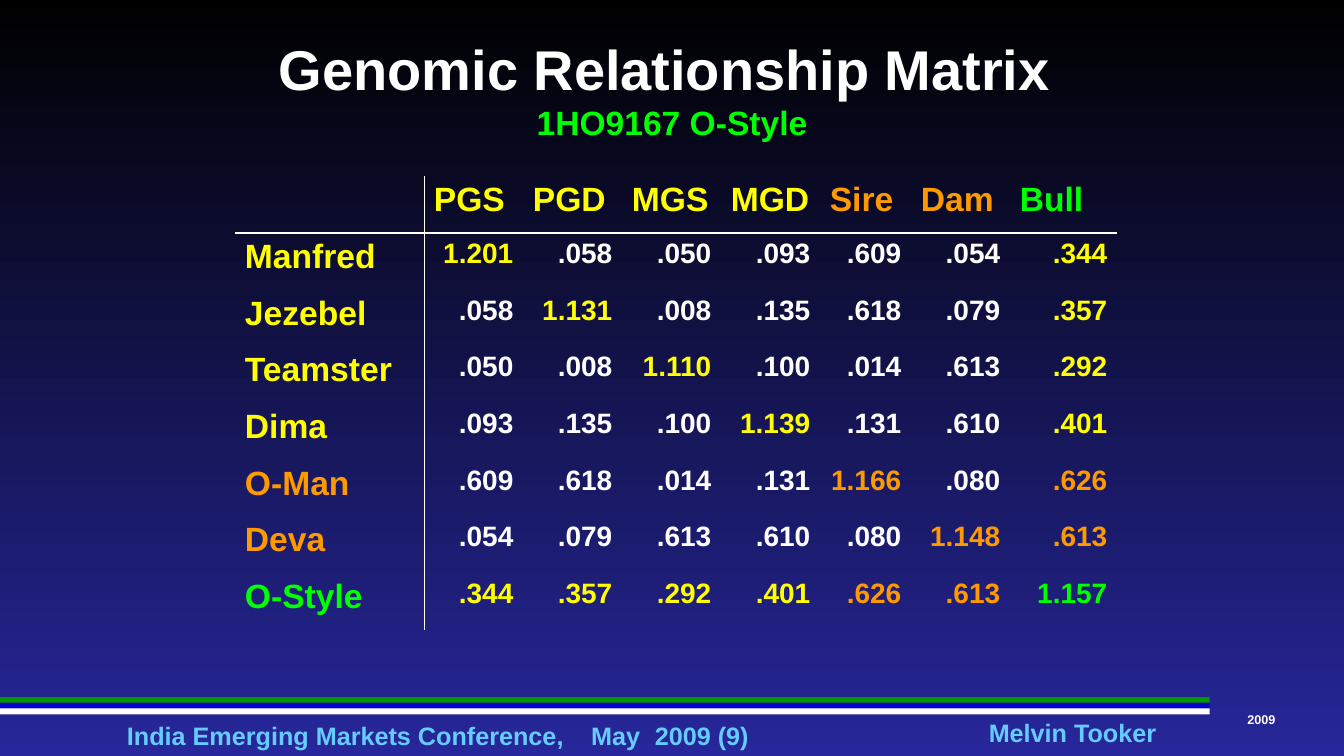
from lxml import etree
from pptx import Presentation
from pptx.dml.color import RGBColor
from pptx.enum.shapes import MSO_SHAPE
from pptx.enum.text import MSO_ANCHOR, PP_ALIGN
from pptx.oxml.ns import qn
from pptx.util import Pt

RECTANGLE = MSO_SHAPE.RECTANGLE
MIDDLE = MSO_ANCHOR.MIDDLE
LEFT, CENTER, RIGHT = PP_ALIGN.LEFT, PP_ALIGN.CENTER, PP_ALIGN.RIGHT

COLORS = {
    "black": "000000",
    "navy": "27279B",
    "white": "FFFFFF",
    "yellow": "FFFF00",
    "orange": "FF9900",
    "lime": "00FF00",
    "green": "009900",
    "blue": "0000CC",
    "sky": "66CCFF",
}
NO_STYLE = "{2D5ABB26-0587-4C30-8999-92F81FD0307C}"


def write(para, text, size, color, align=LEFT):
    para.alignment = align
    span = para.add_run()
    span.text = text
    span.font.name = "Arial"
    span.font.size = Pt(size)
    span.font.bold = True
    span.font.color.rgb = RGBColor.from_string(COLORS[color])


def add_border(cell, side, shown):
    line = etree.SubElement(cell._tc.get_or_add_tcPr(), qn(f"a:ln{side}"), w=str(Pt(1)))
    if shown:
        fill = etree.SubElement(line, qn("a:solidFill"))
        etree.SubElement(fill, qn("a:srgbClr"), val=COLORS["white"])
    else:
        etree.SubElement(line, qn("a:noFill"))


deck = Presentation()
deck.slide_width = Pt(960)
deck.slide_height = Pt(540)
page = deck.slides.add_slide(deck.slide_layouts[6])

backdrop = page.background.fill
backdrop.gradient()
backdrop.gradient_angle = 270
for stop, color in zip(backdrop.gradient_stops, ["black", "navy"]):
    stop.color.rgb = RGBColor.from_string(COLORS[color])

footers = [
    ("India Emerging Markets Conference,\tMay\t2009 (9)", 90.7, 514.8, 565, 21.6, 18, "sky", LEFT),
    ("Melvin Tooker", 705.6, 512.6, 121, 21.6, 18, "sky", CENTER),
    ("2009", 887.8, 508.5, 26.6, 10.8, 9, "white", CENTER),
]
for text, left, top, width, height, size, color, align in footers:
    box = page.shapes.add_textbox(Pt(left), Pt(top), Pt(width), Pt(height))
    frame = box.text_frame
    frame.word_wrap = True
    frame.vertical_anchor = MIDDLE
    frame.margin_left = frame.margin_right = frame.margin_top = frame.margin_bottom = 0
    para = frame.paragraphs[0]
    if "\t" in text:
        tabs = etree.SubElement(para._p.get_or_add_pPr(), qn("a:tabLst"))
        for position in [331.5, 377]:
            etree.SubElement(tabs, qn("a:tab"), pos=str(Pt(position)), algn="l")
    write(para, text, size, color, align)

for index, color in enumerate(["green", "blue", "white"]):
    stripe = page.shapes.add_shape(RECTANGLE, 0, Pt(498 + 4 * index), Pt(864), Pt(4.25))
    stripe.shadow.inherit = False
    stripe.fill.solid()
    stripe.fill.fore_color.rgb = RGBColor.from_string(COLORS[color])
    stripe.line.fill.background()

title = page.shapes.add_textbox(Pt(24), Pt(18), Pt(912), Pt(90))
title.text_frame.word_wrap = True
title.text_frame.vertical_anchor = MIDDLE
para = title.text_frame.paragraphs[0]
write(para, "Genomic Relationship Matrix ", 40, "white", CENTER)
para.add_line_break()
write(para, "1HO9167 O-Style", 24, "lime", CENTER)

roles = ["PGS", "PGD", "MGS", "MGD", "Sire", "Dam", "Bull"]
generations = ["yellow"] * 4 + ["orange"] * 2 + ["lime"]
relationships = [
    ("Manfred", "1.201", ".058", ".050", ".093", ".609", ".054", ".344"),
    ("Jezebel", ".058", "1.131", ".008", ".135", ".618", ".079", ".357"),
    ("Teamster", ".050", ".008", "1.110", ".100", ".014", ".613", ".292"),
    ("Dima", ".093", ".135", ".100", "1.139", ".131", ".610", ".401"),
    ("O-Man", ".609", ".618", ".014", ".131", "1.166", ".080", ".626"),
    ("Deva", ".054", ".079", ".613", ".610", ".080", "1.148", ".613"),
    ("O-Style", ".344", ".357", ".292", ".401", ".626", ".613", "1.157"),
]
grid = [("", *roles), *relationships]
widths = [135, 70.7, 70.7, 70.7, 70.7, 65, 70.7, 76.5]
last = len(roles)

table = page.shapes.add_table(
    len(grid), len(widths), Pt(168), Pt(126), Pt(sum(widths)), Pt(324)
).table
table.first_row = False
table.horz_banding = False
table._tbl.tblPr.find(qn("a:tableStyleId")).text = NO_STYLE
for column, width in zip(table.columns, widths):
    column.width = Pt(width)

for row, values in enumerate(grid):
    table.rows[row].height = Pt(40.5)
    for col, text in enumerate(values):
        cell = table.cell(row, col)
        borders = {"L": col == 1, "R": col == 0, "T": row == 1, "B": row == 0}
        for side, shown in borders.items():
            add_border(cell, side, shown)
        cell.fill.background()
        cell.margin_left = cell.margin_right = Pt(7)
        para = cell.text_frame.paragraphs[0]
        if row == 0 and col == 0:
            continue
        if row == 0 or col == 0:
            write(para, text, 24, generations[max(row, col) - 1])
        elif row == col or last in (row, col):
            write(para, text, 20, generations[min(row, col) - 1], RIGHT)
        else:
            write(para, text, 20, "white", RIGHT)

deck.save("out.pptx")
